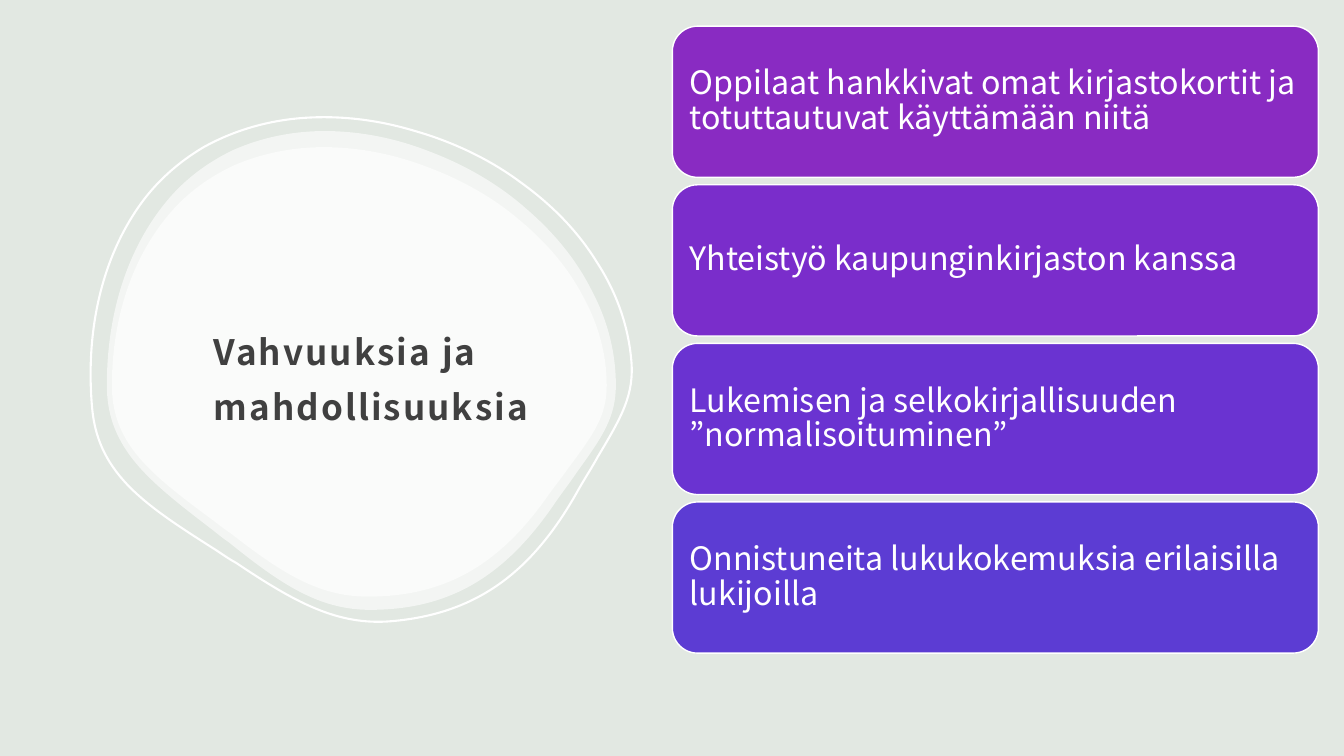
from dataclasses import dataclass

from lxml.etree import SubElement
from pptx import Presentation
from pptx.dml.color import RGBColor
from pptx.enum.shapes import MSO_SHAPE
from pptx.enum.text import MSO_ANCHOR, MSO_AUTO_SIZE, PP_ALIGN
from pptx.oxml.ns import qn
from pptx.util import Inches, Pt

# Content
TITLE = "Vahvuuksia ja mahdollisuuksia"
STRENGTHS = [
    ("Oppilaat hankkivat omat kirjastokortit ja totuttautuvat käyttämään niitä", "892BC2"),
    ("Yhteistyö kaupunginkirjaston kanssa", "7A2DCB"),
    ("Lukemisen ja selkokirjallisuuden ”normalisoituminen”", "6A33D1"),
    ("Onnistuneita lukukokemuksia erilaisilla lukijoilla", "5C3CD3"),
]

# Blob outline: a start point, then Bézier curves (two controls and an end)
BLOB_BOX = (1.06, 1.3, 5.05, 4.75)
BLOB_START = (3.22, 1.3)
BLOB_CURVES = [
    ((2.89, 1.3), (2.58, 1.37), (2.31, 1.49)),
    ((2.06, 1.61), (1.83, 1.78), (1.65, 2)),
    ((1.27, 2.46), (1.06, 3.1), (1.06, 3.82)),
    ((1.06, 4.1), (1.14, 4.33), (1.32, 4.56)),
    ((1.51, 4.8), (1.8, 5.02), (2.1, 5.25)),
    ((2.15, 5.29), (2.21, 5.34), (2.27, 5.38)),
    ((2.78, 5.79), (3.16, 6.05), (3.67, 6.05)),
    ((4.45, 6.05), (5.01, 5.73), (5.52, 4.97)),
    ((5.59, 4.87), (5.66, 4.78), (5.72, 4.69)),
    ((5.98, 4.33), (6.11, 4.14), (6.11, 3.82)),
    ((6.11, 3.5), (6.03, 3.18), (5.87, 2.88)),
    ((5.72, 2.58), (5.5, 2.31), (5.22, 2.07)),
    ((4.95, 1.83), (4.62, 1.64), (4.28, 1.51)),
    ((3.93, 1.37), (3.57, 1.3), (3.22, 1.3)),
]
INNER_BOX = (1.11, 1.46, 4.91, 4.46)
RING_BOX = (0.89, 1.13, 5.37, 5.05)
RING_ROTATION = 355

# Layout of the bars
BAR_LEFT, BAR_WIDTH, BAR_HEIGHT = 6.67, 6.41, 1.5
FIRST_BAR_TOP, LAST_BAR_TOP = 0.26, 4.98


@dataclass(frozen=True)
class Theme:
    font: str = "Noto Sans CJK JP"
    background: str = "E2E8E2"
    white: str = "FFFFFF"
    title_color: str = "404040"
    title_size: float = 25
    bar_size: float = 23
    ring_width: float = 1.5
    bar_line_width: float = 1
    blob_opacity: int = 60


THEME = Theme()


def color(value):
    return RGBColor.from_string(value)


def add_blob(slide, box):
    """Draw the blob outline scaled into the box."""
    left, top, width, height = box
    base_left, base_top, base_width, base_height = BLOB_BOX

    def place(point):
        return (Inches(left + (point[0] - base_left) * width / base_width),
                Inches(top + (point[1] - base_top) * height / base_height))

    builder = slide.shapes.build_freeform(*place(BLOB_START))
    builder.add_line_segments([place(curve[-1]) for curve in BLOB_CURVES], close=True)
    shape = builder.convert_to_shape()
    shape.shadow.inherit = False

    # Turn each straight segment into its Bézier curve
    segments = list(shape.element.iter(qn("a:lnTo")))
    for segment, curve in zip(segments, BLOB_CURVES):
        segment.tag = qn("a:cubicBezTo")
        end_point = segment[0]
        for control in curve[:2]:
            x, y = place(control)
            control_point = SubElement(segment, qn("a:pt"))
            control_point.set("x", str(x - shape.left))
            control_point.set("y", str(y - shape.top))
        segment.append(end_point)
    return shape


def write(text_frame, text, size, text_color, line_spacing, inset):
    """Fill a text frame with one left-aligned run and return the run."""
    text_frame.word_wrap = True
    text_frame.auto_size = MSO_AUTO_SIZE.NONE
    text_frame.vertical_anchor = MSO_ANCHOR.MIDDLE
    text_frame.margin_left = text_frame.margin_right = Inches(inset)
    text_frame.margin_top = Inches(inset)
    text_frame.margin_bottom = Inches(0.1)
    paragraph = text_frame.paragraphs[0]
    paragraph.alignment = PP_ALIGN.LEFT
    paragraph.line_spacing = line_spacing
    run = paragraph.add_run()
    run.text = text
    run.font.name = THEME.font
    run.font.size = Pt(size)
    run.font.color.rgb = color(text_color)
    return run


def add_title(slide):
    title = slide.shapes.title
    title.left, title.top = Inches(2), Inches(2.08)
    title.width, title.height = Inches(3.62), Inches(3.21)
    run = write(title.text_frame, TITLE, THEME.title_size, THEME.title_color, 1.3, 0.12)
    run.font.bold = True
    run.font._element.set("spc", "150")
    # Bring the title in front of the blobs
    title.element.getparent().append(title.element)


def add_blobs(slide):
    for box in (BLOB_BOX, INNER_BOX):
        blob = add_blob(slide, box)
        blob.fill.solid()
        blob.fill.fore_color.rgb = color(THEME.white)
        blob.line.fill.background()
        fill_color = blob.element.spPr.find(qn("a:solidFill")).find(qn("a:srgbClr"))
        SubElement(fill_color, qn("a:alpha")).set("val", str(THEME.blob_opacity * 1000))
    ring = add_blob(slide, RING_BOX)
    ring.rotation = RING_ROTATION
    ring.fill.background()
    ring.line.color.rgb = color(THEME.white)
    ring.line.width = Pt(THEME.ring_width)


def add_bars(slide):
    pitch = (LAST_BAR_TOP - FIRST_BAR_TOP) / (len(STRENGTHS) - 1)
    for index, (text, fill) in enumerate(STRENGTHS):
        bar = slide.shapes.add_shape(
            MSO_SHAPE.ROUNDED_RECTANGLE,
            Inches(BAR_LEFT), Inches(FIRST_BAR_TOP + index * pitch),
            Inches(BAR_WIDTH), Inches(BAR_HEIGHT))
        bar.shadow.inherit = False
        bar.fill.solid()
        bar.fill.fore_color.rgb = color(fill)
        bar.line.color.rgb = color(THEME.white)
        bar.line.width = Pt(THEME.bar_line_width)
        write(bar.text_frame, text, THEME.bar_size, THEME.white, 0.9, 0.1)


def main():
    presentation = Presentation()
    presentation.slide_width = Inches(40 / 3)
    presentation.slide_height = Inches(7.5)
    slide = presentation.slides.add_slide(presentation.slide_layouts[5])
    slide.background.fill.solid()
    slide.background.fill.fore_color.rgb = color(THEME.background)
    add_blobs(slide)
    add_title(slide)
    add_bars(slide)
    presentation.save("out.pptx")


if __name__ == "__main__":
    main()
